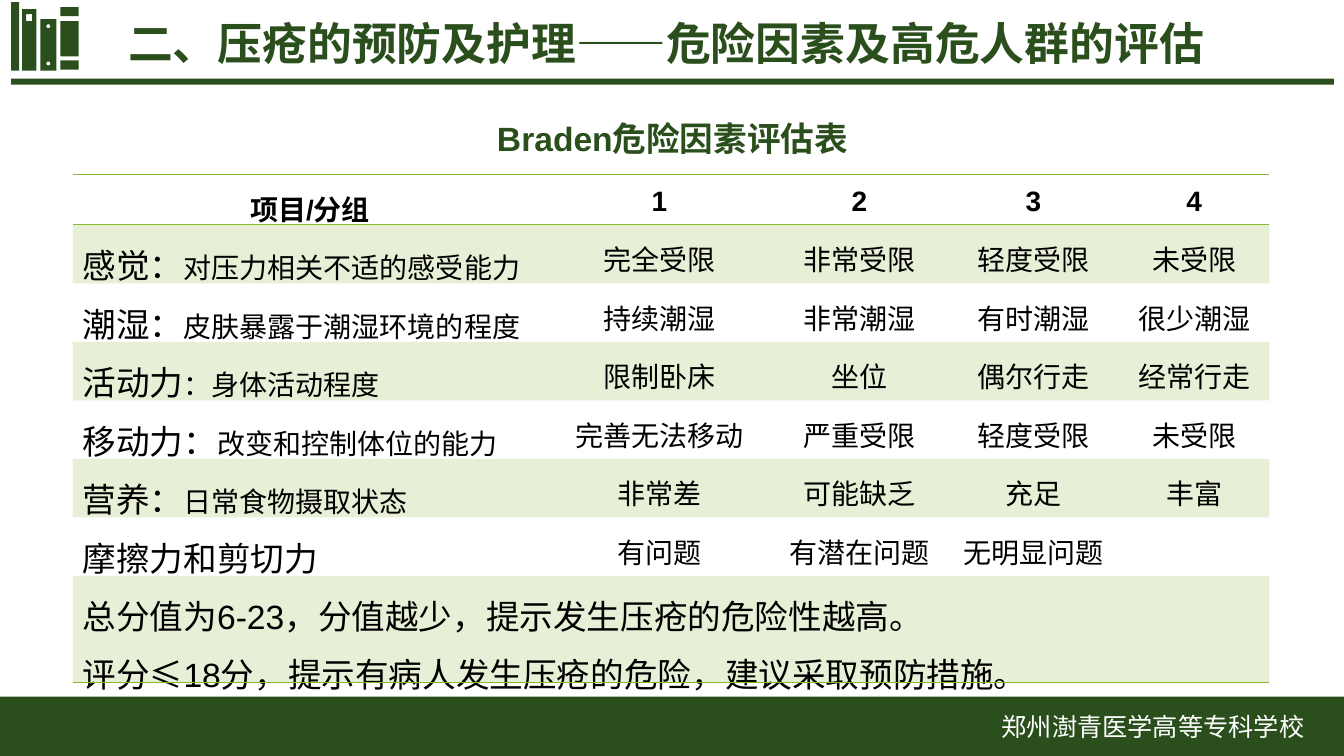
import math

from lxml import etree
from pptx import Presentation
from pptx import util as u
from pptx.dml.color import RGBColor
from pptx.enum import shapes, text
from pptx.oxml import ns

GREEN = RGBColor(0x2A, 0x4F, 0x1C)
LIME = RGBColor(0x8A, 0xB8, 0x33)
WHITE = RGBColor(0xFF, 0xFF, 0xFF)
BLACK = RGBColor(0, 0, 0)
CJK = "Noto Sans CJK SC"
NO_STYLE = "{2D5ABB26-0587-4C30-8999-92F81FD0307C}"
W, H = 13.33, 7.5

COLUMNS = [4.71, 2.22, 1.75, 1.7, 1.49]
HEAD_H, ROW_H, NOTE_H = 0.5, 0.58, 1.06
HEADINGS = ["项目/分组", "1", "2", "3", "4"]
FACTORS = [
    ("感觉：", "对压力相关不适的感受能力", ["完全受限", "非常受限", "轻度受限", "未受限"]),
    ("潮湿：", "皮肤暴露于潮湿环境的程度", ["持续潮湿", "非常潮湿", "有时潮湿", "很少潮湿"]),
    ("活动力", "：身体活动程度", ["限制卧床", "坐位", "偶尔行走", "经常行走"]),
    ("移动力：", "改变和控制体位的能力", ["完善无法移动", "严重受限", "轻度受限", "未受限"]),
    ("营养：", "日常食物摄取状态", ["非常差", "可能缺乏", "充足", "丰富"]),
    ("摩擦力和剪切力", "", ["有问题", "有潜在问题", "无明显问题"]),
]
NOTES = [
    "总分值为6-23，分值越少，提示发生压疮的危险性越高。",
    "评分≤18分，提示有病人发生压疮的危险，建议采取预防措施。",
]


def inches(*values):
    return [u.Inches(v) for v in values]


def add_text(p, words, size=20, color=BLACK, bold=False, font="Arial",
             align=text.PP_ALIGN.LEFT, spacing=None):
    p.alignment = align
    if spacing:
        p.line_spacing = spacing
    r = p.add_run()
    r.text = words
    r.font.size, r.font.bold, r.font.name = u.Pt(size), bold, font
    r.font.color.rgb = color
    ea = etree.SubElement(r.font._element, ns.qn("a:ea"))
    ea.set("typeface", CJK)


def paint(sp):
    sp.shadow.inherit = False
    sp.fill.solid()
    sp.fill.fore_color.rgb = GREEN
    sp.line.fill.background()


def add_bar(s, *box):
    paint(s.shapes.add_shape(shapes.MSO_SHAPE.RECTANGLE, *inches(*box)))


def corners(x, y, w, h):
    return [inches(*point) for point in
            [(x, y), (x + w, y), (x + w, y + h), (x, y + h)]]


def ring(x, y, radius, steps=16):
    angles = [2 * math.pi * i / steps for i in range(steps)]
    return [inches(x + radius * math.cos(a), y + radius * math.sin(a)) for a in angles]


def add_book(s, outline, *holes):
    builder = s.shapes.build_freeform(*outline[0])
    builder.add_line_segments(outline[1:])
    for hole in holes:
        builder.move_to(*hole[0])
        builder.add_line_segments(hole[1:])
    paint(builder.convert_to_shape())


def books(s, x, y):
    add_bar(s, x, y, 0.08, 0.68)
    for top, height in [(0.05, 0.09), (0.19, 0.35), (0.58, 0.09)]:
        add_bar(s, x + 0.49, y + top, 0.18, height)
    add_book(s, corners(x + 0.29, y + 0.17, 0.16, 0.51),
             *[ring(x + 0.37, y + dy, 0.02) for dy in (0.24, 0.61)])
    add_book(s, corners(x + 0.11, y + 0.07, 0.14, 0.61),
             corners(x + 0.15, y + 0.12, 0.06, 0.07))


def header(s, x, y, w):
    books(s, x, y)
    add_bar(s, x, y + 0.76, w, 0.06)
    sp = s.shapes.title
    sp.left, sp.top, sp.width, sp.height = inches(x + 1.06, y + 0.09, 10.96, 0.63)
    tf = sp.text_frame
    tf.auto_size = text.MSO_AUTO_SIZE.NONE
    tf.vertical_anchor = text.MSO_ANCHOR.MIDDLE
    add_text(tf.paragraphs[0], "二、压疮的预防及护理——危险因素及高危人群的评估",
             size=32, color=GREEN, bold=True, font=CJK)


def label(s, box, words, **style):
    tf = s.shapes.add_textbox(*inches(*box)).text_frame
    tf.word_wrap = True
    tf.vertical_anchor = text.MSO_ANCHOR.MIDDLE
    add_text(tf.paragraphs[0], words, align=text.PP_ALIGN.CENTER, **style)


def footer(s, y, h):
    add_bar(s, 0, y, W, h)
    label(s, (W - 3.79, y + 0.07, 3.79, 0.46), "郑州澍青医学高等专科学校",
          size=18, color=WHITE, font=CJK)


def shade(cell, on):
    if not on:
        cell.fill.background()
        return
    cell.fill.solid()
    cell.fill.fore_color.rgb = LIME
    color = cell._tc.tcPr.find(".//" + ns.qn("a:srgbClr"))
    etree.SubElement(color, ns.qn("a:alpha")).set("val", "20000")


def rule(cell, *sides):
    for i, side in enumerate(sides):
        ln = etree.Element(ns.qn("a:" + side), w=str(u.Pt(1)))
        fill = etree.SubElement(ln, ns.qn("a:solidFill"))
        etree.SubElement(fill, ns.qn("a:srgbClr")).set("val", str(LIME))
        cell._tc.get_or_add_tcPr().insert(i, ln)


def braden_table(s, x, y):
    heights = [HEAD_H] + [ROW_H] * len(FACTORS) + [NOTE_H]
    frame = s.shapes.add_table(len(heights), len(COLUMNS),
                               *inches(x, y, sum(COLUMNS), sum(heights)))
    table = frame.table
    table._tbl.tblPr.find(ns.qn("a:tableStyleId")).text = NO_STYLE
    for col, width in zip(table.columns, COLUMNS):
        col.width = u.Inches(width)
    for i, (row, height) in enumerate(zip(table.rows, heights)):
        row.height = u.Inches(height)
        for cell in row.cells:
            shade(cell, i % 2)
    centred = {"align": text.PP_ALIGN.CENTER, "spacing": 1.2}
    for j, heading in enumerate(HEADINGS):
        cell = table.cell(0, j)
        rule(cell, "lnT", "lnB")
        add_text(cell.text_frame.paragraphs[0], heading, bold=True, **centred)
    for i, (name, detail, grades) in enumerate(FACTORS, 1):
        p = table.cell(i, 0).text_frame.paragraphs[0]
        add_text(p, name, size=24, spacing=1.2)
        if detail:
            add_text(p, detail, spacing=1.2)
        for j, grade in enumerate(grades, 1):
            cell = table.cell(i, j)
            cell.vertical_anchor = text.MSO_ANCHOR.MIDDLE
            add_text(cell.text_frame.paragraphs[0], grade, **centred)
    last = len(heights) - 1
    for cell in table.rows[last].cells:
        rule(cell, "lnB")
    note = table.cell(last, 0)
    note.merge(table.cell(last, len(COLUMNS) - 1))
    tf = note.text_frame
    for i, line in enumerate(NOTES):
        p = tf.add_paragraph() if i else tf.paragraphs[0]
        add_text(p, line, size=24, spacing=1.2)


def main():
    prs = Presentation()
    prs.slide_width, prs.slide_height = inches(W, H)
    s = prs.slides.add_slide(prs.slide_layouts[5])
    header(s, 0.11, 0.02, 13.12)
    footer(s, 6.91, 0.59)
    label(s, (3.48, 1.12, 6.38, 0.5), "Braden危险因素评估表",
          size=24, color=GREEN, bold=True)
    braden_table(s, 0.72, 1.73)
    prs.save("out.pptx")


if __name__ == "__main__":
    main()
